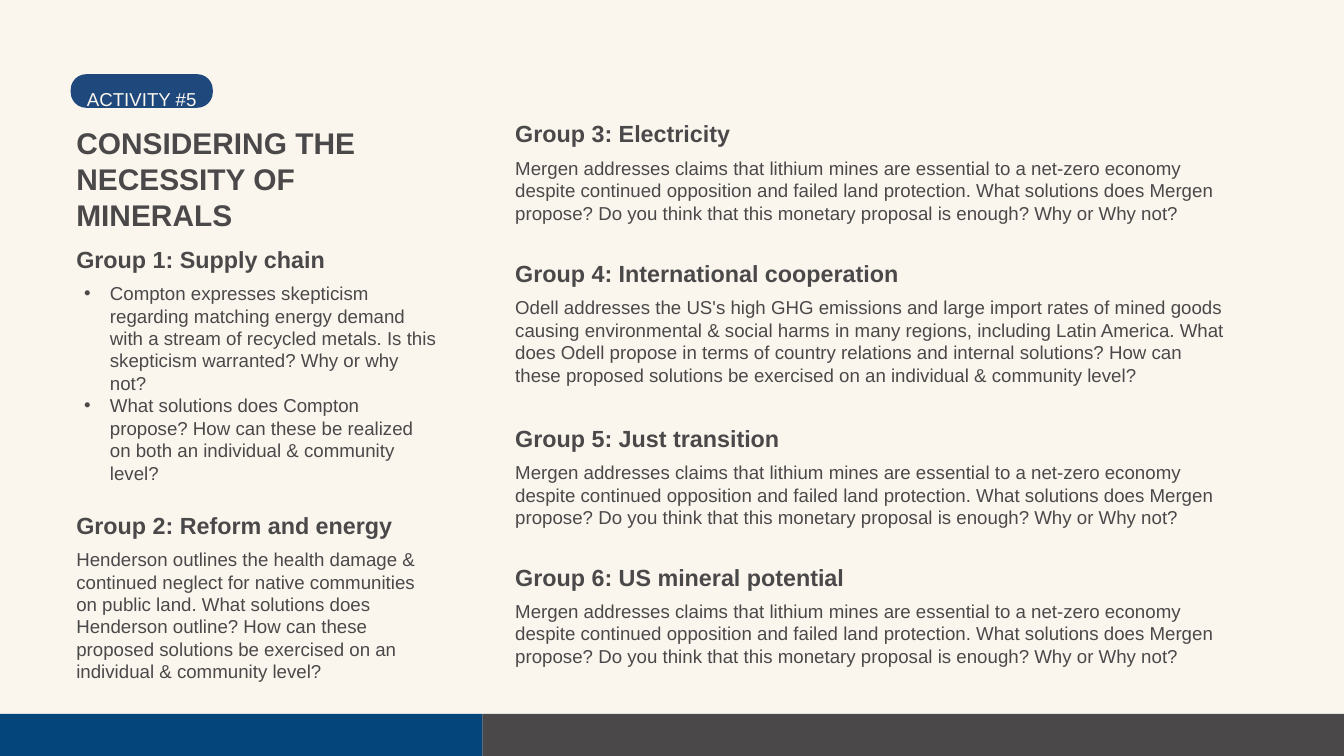
from lxml import etree
from pptx import Presentation
from pptx.dml.color import RGBColor
from pptx.enum.shapes import MSO_SHAPE as Shape
from pptx.enum.text import MSO_ANCHOR as Anchor, MSO_AUTO_SIZE as AutoSize, PP_ALIGN as Align
from pptx.oxml.ns import qn
from pptx.util import Pt

# Content
TITLE = "CONSIDERING THE NECESSITY OF MINERALS"
TAG = "ACTIVITY #5"
MERGEN = (
    "Mergen addresses claims that lithium mines are essential to a net-zero economy "
    "despite continued opposition and failed land protection. What solutions does Mergen "
    "propose? Do you think that this monetary proposal is enough? Why or Why not?"
)
COMPTON = [
    "Compton expresses skepticism regarding matching energy demand with a stream of "
    "recycled metals. Is this skepticism warranted? Why or why not?",
    "What solutions does Compton propose? How can these be realized on both an "
    "individual & community level?",
]
HENDERSON = (
    "Henderson outlines the health damage & continued neglect for native communities on "
    "public land. What solutions does Henderson outline? How can these proposed solutions "
    "be exercised on an individual & community level?"
)
ODELL = (
    "Odell addresses the US's high GHG emissions and large import rates of mined goods "
    "causing environmental & social harms in many regions, including Latin America. What "
    "does Odell propose in terms of country relations and internal solutions? How can these "
    "proposed solutions be exercised on an individual & community level?"
)
# Columns: left, width, groups of (top, heading, paragraphs, lines, bulleted)
COLUMNS = [
    (109, 518, [
        (350, "Group 1: Supply chain", COMPTON, 9, True),
        (730, "Group 2: Reform and energy", [HENDERSON], 6, False),
    ]),
    (736, 1023, [
        (171, "Group 3: Electricity", [MERGEN], 3, False),
        (370, "Group 4: International cooperation", [ODELL], 4, False),
        (606, "Group 5: Just transition", [MERGEN], 3, False),
        (804, "Group 6: US mineral potential", [MERGEN], 3, False),
    ]),
]

# Style
PX = 9525
WIDTH, HEIGHT = 1920, 1080
HEADING_HEIGHT, BODY_OFFSET, LINE_HEIGHT = 40, 53, 32
BAR_TOP, BAR_SPLIT = 1020, 689
BULLET_LEFT, BULLET_HANG = 48, 37
CREAM = RGBColor(0xFA, 0xF6, 0xEE)
GRAY = RGBColor(0x4A, 0x48, 0x49)
BLUE = RGBColor(0x04, 0x46, 0x7C)
NAVY = RGBColor(0x1F, 0x49, 0x7D)
TITLE_STYLE = dict(size=Pt(32), bold=True, spacing=Pt(38.5), color=GRAY)
HEADING_STYLE = dict(size=Pt(25), bold=True, spacing=Pt(30), color=GRAY)
BODY_STYLE = dict(size=Pt(20), bold=False, spacing=Pt(24), color=GRAY)
TAG_STYLE = dict(size=Pt(20), bold=False, spacing=1.4, color=CREAM)
FRAME_FORMAT = dict(
    word_wrap=True, auto_size=AutoSize.NONE, vertical_anchor=Anchor.TOP,
    margin_left=0, margin_top=0, margin_right=0, margin_bottom=0,
)


def scaled(*lengths):
    return [length * PX for length in lengths]


def add_bullet(paragraph):
    paragraph.level = 1
    properties = paragraph._p.get_or_add_pPr()
    properties.set("marL", str(BULLET_LEFT * PX))
    properties.set("indent", str(-BULLET_HANG * PX))
    etree.SubElement(properties, qn("a:buFont")).set("typeface", "Arial")
    etree.SubElement(properties, qn("a:buChar")).set("char", "•")


def write(shape, texts, style, bulleted=False):
    frame = shape.text_frame
    for name, value in FRAME_FORMAT.items():
        setattr(frame, name, value)
    for index, text in enumerate(texts):
        paragraph = frame.paragraphs[0] if index == 0 else frame.add_paragraph()
        if bulleted:
            add_bullet(paragraph)
        paragraph.alignment = Align.LEFT
        paragraph.line_spacing = style["spacing"]
        paragraph.space_before = paragraph.space_after = Pt(0)
        run = paragraph.add_run()
        run.text = text
        for name, value in dict(name="Arial", size=style["size"], bold=style["bold"]).items():
            setattr(run.font, name, value)
        run.font.color.rgb = style["color"]


def add_text(slide, box, texts, style, bulleted=False):
    write(slide.shapes.add_textbox(*scaled(*box)), texts, style, bulleted)


def add_block(slide, kind, box, color):
    shape = slide.shapes.add_shape(kind, *scaled(*box))
    shape.shadow.inherit = False
    shape.fill.solid()
    shape.fill.fore_color.rgb = color
    shape.line.fill.background()
    return shape


def main():
    presentation = Presentation()
    presentation.slide_width, presentation.slide_height = scaled(WIDTH, HEIGHT)
    slide = presentation.slides.add_slide(presentation.slide_layouts[5])
    slide.background.fill.solid()
    slide.background.fill.fore_color.rgb = CREAM

    # Footer bars
    bar_height = HEIGHT - BAR_TOP
    add_block(slide, Shape.RECTANGLE, (BAR_SPLIT, BAR_TOP, WIDTH - BAR_SPLIT, bar_height), GRAY)
    add_block(slide, Shape.RECTANGLE, (0, BAR_TOP, BAR_SPLIT, bar_height), BLUE)

    # Title
    title = slide.shapes.title
    title.left, title.top, title.width, title.height = scaled(109, 178, 446, 156)
    write(title, [TITLE], TITLE_STYLE)

    # Discussion groups
    for left, width, groups in COLUMNS:
        for top, heading, texts, lines, bulleted in groups:
            add_text(slide, (left, top, width, HEADING_HEIGHT), [heading], HEADING_STYLE)
            body = (left, top + BODY_OFFSET, width, lines * LINE_HEIGHT)
            add_text(slide, body, texts, BODY_STYLE, bulleted)

    # Activity tag
    pill = add_block(slide, Shape.ROUNDED_RECTANGLE, (101, 106, 203, 48), NAVY)
    pill.adjustments[0] = 0.46
    add_text(slide, (124, 113, 896, 33), [TAG], TAG_STYLE)

    presentation.save("out.pptx")


if __name__ == "__main__":
    main()
